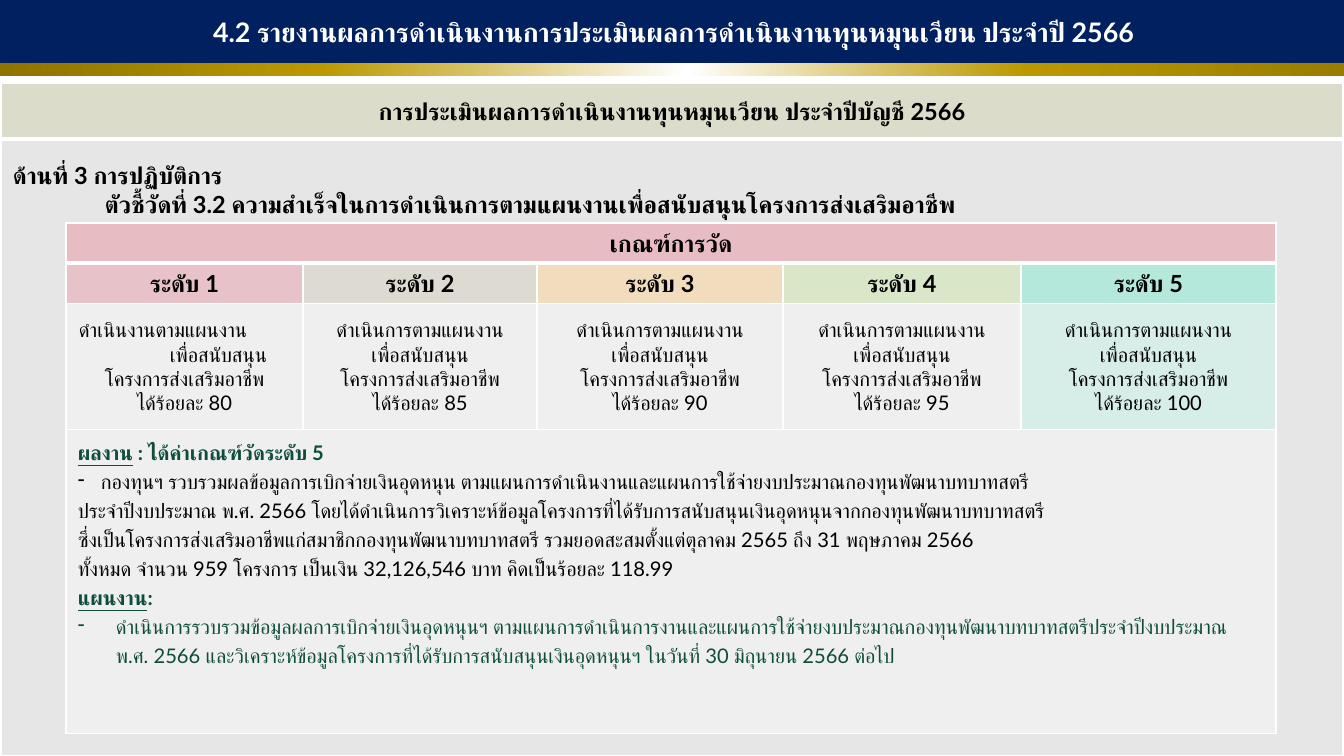
from lxml import etree
from pptx import Presentation
from pptx import util as u
from pptx.dml.color import RGBColor
from pptx.enum import shapes, text
from pptx.oxml.ns import qn

FONT = "Lato"
BLACK, WHITE, GREEN = "000000", "FFFFFF", "0E4D3C"
TITLE = "4.2 รายงานผลการดำเนินงานการประเมินผลการดำเนินงานทุนหมุนเวียน ประจำปี 2566"
GOLD = [(0, "8E7300"), (24, "BC9800"), (51, "FFFFFF"), (76, "BC9800"), (100, "9A7D00")]
SUBTITLE = "การประเมินผลการดำเนินงานทุนหมุนเวียน ประจำปีบัญชี 2566"
SIDE = "ด้านที่ 3 การปฏิบัติการ"
INDICATOR = "ตัวชี้วัดที่ 3.2 ความสำเร็จในการดำเนินการตามแผนงานเพื่อสนับสนุนโครงการส่งเสริมอาชีพ"
CRITERIA = "เกณฑ์การวัด"
PLAN, SUPPORT, PROJECT = "ดำเนินการตามแผนงาน", "เพื่อสนับสนุน", "โครงการส่งเสริมอาชีพ"
FIRST_PLAN = "ดำเนินงานตามแผนงาน"
LEVELS = [
    ("80", "E8ABB5", "F2F2F2", 80),
    ("85", "D6D2C4", "F2F2F2", 80),
    ("90", "F9D8A3", "F2F2F2", 80),
    ("95", "D1E6B5", "F2F2F2", 80),
    ("100", "91EAD2", "C8F5E8", 50),
]
RESULTS = [
    (0, GREEN, [("ผลงาน", True, True), (" : ได้ค่าเกณฑ์วัดระดับ 5", True, False)]),
    (23, BLACK, [("กองทุนฯ รวบรวมผลข้อมูลการเบิกจ่ายเงินอุดหนุน ตามแผนการดำเนินงานและแผนการใช้จ่ายงบประมาณกองทุนพัฒนาบทบาทสตรี", False, False)]),
    (0, BLACK, [("ประจำปีงบประมาณ พ.ศ. 2566 โดยได้ดำเนินการวิเคราะห์ข้อมูลโครงการที่ได้รับการสนับสนุนเงินอุดหนุนจากกองทุนพัฒนาบทบาทสตรี", False, False)]),
    (0, BLACK, [("ซึ่งเป็นโครงการส่งเสริมอาชีพแก่สมาชิกกองทุนพัฒนาบทบาทสตรี รวมยอดสะสมตั้งแต่ตุลาคม 2565 ถึง 31 พฤษภาคม 2566", False, False)]),
    (0, BLACK, [("ทั้งหมด จำนวน 959 โครงการ เป็นเงิน 32,126,546 บาท คิดเป็นร้อยละ 118.99", False, False)]),
    (0, GREEN, [("แผนงาน", True, True), (":", True, False)]),
    (38, GREEN, [("ดำเนินการรวบรวมข้อมูลผลการเบิกจ่ายเงินอุดหนุนฯ ตามแผนการดำเนินการงานและแผนการใช้จ่ายงบประมาณกองทุนพัฒนาบทบาทสตรีประจำปีงบประมาณ พ.ศ. 2566 และวิเคราะห์ข้อมูลโครงการที่ได้รับการสนับสนุนเงินอุดหนุนฯ ในวันที่ 30 มิถุนายน 2566 ต่อไป", False, False)]),
]
COLS = [237, 234, 246, 238, 255]
ROWS = [39, 39, 126, 304]
LEFT, CENTER = text.PP_ALIGN.LEFT, text.PP_ALIGN.CENTER
TOP, MIDDLE = text.MSO_ANCHOR.TOP, text.MSO_ANCHOR.MIDDLE


def px(n):
    return u.Emu(round(n * 914400 / 121))


def rgb(color):
    return RGBColor.from_string(color)


def sub(parent, tag, **attrs):
    el = etree.SubElement(parent, qn(tag))
    for name, value in attrs.items():
        el.set(name, str(value))
    return el


def add_par(tf, runs, size, color=BLACK, align=LEFT, margin=0, dash=False, spacing=None, after=None):
    p = tf.paragraphs[0]
    if p.runs:
        p = tf.add_paragraph()
    p.alignment = align
    pPr = p._p.get_or_add_pPr()
    pPr.set("marL", str(px(margin)))
    pPr.set("indent", str(px(-margin if dash else 0)))
    if dash:
        sub(pPr, "a:buChar", char="-")
    if spacing:
        p.line_spacing = spacing
    if after:
        p.space_after = u.Pt(after)
    for words, bold, underline in runs:
        r = p.add_run()
        r.text = words
        f = r.font
        f.name, f.size, f.bold, f.underline = FONT, u.Pt(size), bold, underline
        f.color.rgb = rgb(color)
        sub(r._r.get_or_add_rPr(), "a:cs", typeface=FONT)


def bold(words):
    return [(words, True, False)]


def plain(words):
    return [(words, False, False)]


def add_table(s, x, y, cols, rows):
    tbl = s.shapes.add_table(len(rows), len(cols), px(x), px(y), px(sum(cols)), px(sum(rows))).table
    tbl.first_row = tbl.horz_banding = False
    for col, w in zip(tbl.columns, cols):
        col.width = px(w)
    for row, h in zip(tbl.rows, rows):
        row.height = px(h)
    return tbl


def style(cell, color, alpha=100, anchor=MIDDLE, inset=(12, 6), top=1, bottom=1):
    cell.vertical_anchor = anchor
    cell.margin_left = cell.margin_right = px(inset[0])
    cell.margin_top = cell.margin_bottom = px(inset[1])
    cell.fill.solid()
    cell.fill.fore_color.rgb = rgb(color)
    tcPr = cell._tc.get_or_add_tcPr()
    if alpha < 100:
        sub(tcPr.find(".//" + qn("a:srgbClr")), "a:alpha", val=alpha * 1000)
    for i, (side, width) in enumerate(zip("LRTB", (1, 1, top, bottom))):
        ln = sub(tcPr, "a:ln" + side, w=u.Pt(width))
        sub(sub(ln, "a:solidFill"), "a:srgbClr", val=WHITE)
        tcPr.insert(i, ln)
    return cell.text_frame


def add_outer(s):
    tbl = add_table(s, 1, 83, [1342], [56, 617])
    tf = style(tbl.cell(0, 0), "DBDCC9", inset=(12, 8), bottom=3)
    add_par(tf, bold(SUBTITLE), 14, align=CENTER)
    tf = style(tbl.cell(1, 0), "E7E6E6", anchor=TOP, inset=(12, 8), top=3)
    add_par(tf, bold(SIDE), 14, spacing=1.5, after=0.5)
    add_par(tf, bold(INDICATOR), 14, margin=92, after=6)


def add_criteria(s):
    tbl = add_table(s, 66, 223, COLS, ROWS)
    last = len(COLS) - 1
    for row in (0, 3):
        tbl.cell(row, 0).merge(tbl.cell(row, last))
    for c in range(len(COLS)):
        head = style(tbl.cell(0, c), "E8ABB5", 70, bottom=3)
        body = style(tbl.cell(3, c), "F2F2F2", 80, TOP)
        if c == 0:
            add_par(head, bold(CRITERIA), 14, align=CENTER)
            for margin, color, runs in RESULTS:
                add_par(body, runs, 12, color, margin=margin, dash=margin > 0, spacing=1.2)
    for c, (percent, head_color, color, alpha) in enumerate(LEVELS):
        tf = style(tbl.cell(1, c), head_color, 60, top=3)
        add_par(tf, bold(f"ระดับ {c + 1}"), 14, align=CENTER)
        tf = style(tbl.cell(2, c), color, alpha, inset=(8, 0) if c == 2 else (12, 6))
        if c == 0:
            add_par(tf, plain(FIRST_PLAN), 12, margin=1)
            add_par(tf, plain(SUPPORT), 12, margin=92)
        else:
            add_par(tf, plain(PLAN), 12, align=CENTER)
            add_par(tf, plain(SUPPORT), 12, align=CENTER)
        for words in (PROJECT, f"ได้ร้อยละ {percent}"):
            add_par(tf, plain(words), 12, align=CENTER)


def add_bar(grp, height):
    sp = grp.shapes.add_shape(shapes.MSO_SHAPE.RECTANGLE, px(-1), 0, px(1349), px(height))
    sp.shadow.inherit = False
    sp.line.fill.background()
    return sp


def add_title(s):
    grp = s.shapes.add_group_shape()
    gold = add_bar(grp, 76)
    gold.fill.gradient()
    gold.fill.gradient_angle = 0
    stops = gold._element.spPr.find(".//" + qn("a:gsLst"))
    for gs in list(stops):
        stops.remove(gs)
    for pos, color in GOLD:
        sub(sub(stops, "a:gs", pos=pos * 1000), "a:srgbClr", val=color)
    navy = add_bar(grp, 63)
    navy.fill.solid()
    navy.fill.fore_color.rgb = rgb("002060")
    tf = navy.text_frame
    tf.word_wrap = True
    tf.vertical_anchor = MIDDLE
    add_par(tf, bold(TITLE), 16, WHITE, CENTER)


def main():
    prs = Presentation()
    prs.slide_width, prs.slide_height = px(1344), px(756)
    s = prs.slides.add_slide(prs.slide_layouts[6])
    add_outer(s)
    add_criteria(s)
    add_title(s)
    prs.save("out.pptx")


if __name__ == "__main__":
    main()
